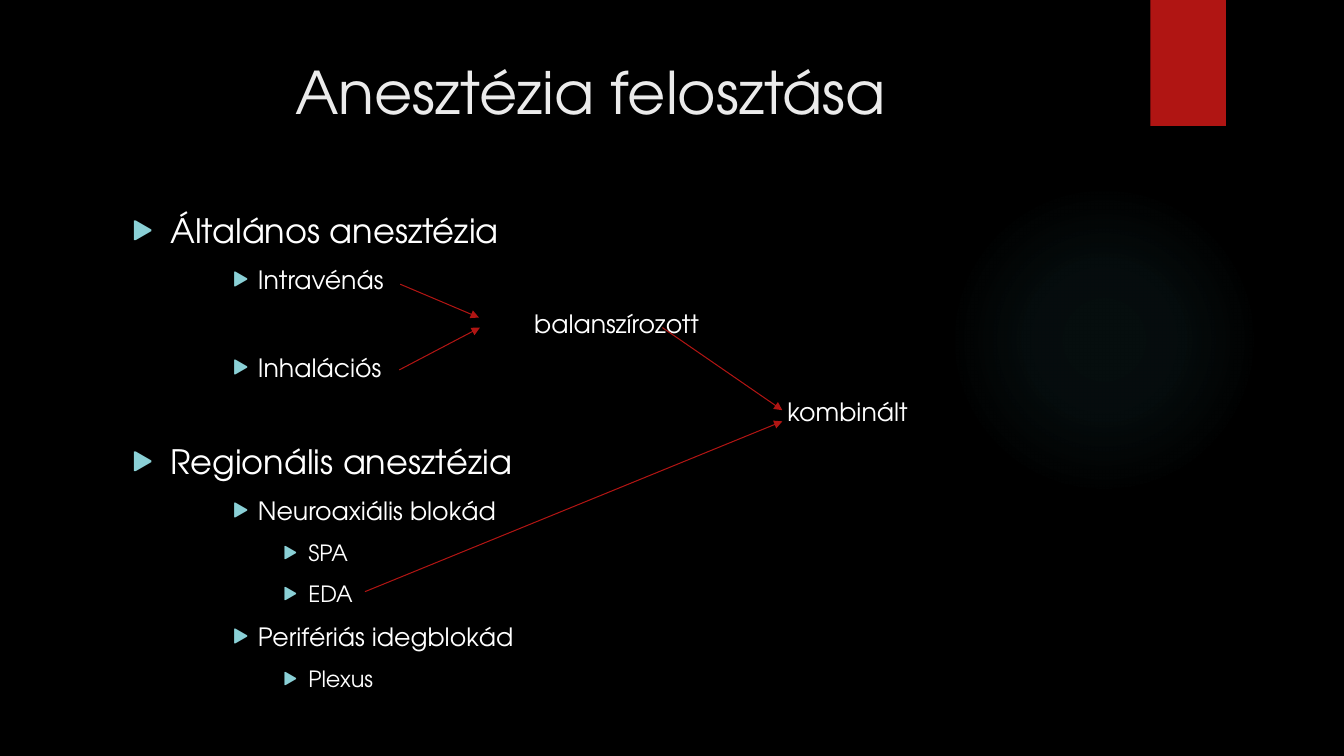
"""Builds the slide on the classification of anaesthesia."""
import lxml.etree
import pptx
import pptx.dml.color
import pptx.enum.shapes
import pptx.enum.text
import pptx.oxml
import pptx.oxml.ns
import pptx.util

Inches, Pt = pptx.util.Inches, pptx.util.Pt
RGBColor = pptx.dml.color.RGBColor
qn = pptx.oxml.ns.qn
PP_ALIGN = pptx.enum.text.PP_ALIGN

TITLE = "Anesztézia felosztása"
OUTLINE = [
    ("Általános anesztézia", "topic"),
    ("Intravénás", "type"),
    ("balanszírozott", "balanced"),
    ("Inhalációs", "type"),
    ("kombinált", "combined"),
    ("Regionális anesztézia", "topic"),
    ("Neuroaxiális blokád", "type"),
    ("SPA", "method"),
    ("EDA", "method"),
    ("Perifériás idegblokád", "type"),
    ("Plexus", "method"),
]
STYLES = {
    "topic": dict(size=24, level=0, left=0.38, hang=0.38),
    "type": dict(size=18, level=1, left=1.25, hang=0.25),
    "method": dict(size=16, level=2, left=1.75, hang=0.25),
    "balanced": dict(size=18, level=4, left=3.99),
    "combined": dict(size=18, level=1, left=6.5),
}
ARROWS = [
    ((3.97, 2.82), (4.75, 3.15)),
    ((3.96, 3.67), (4.76, 3.25)),
    ((6.57, 3.25), (7.76, 4.07)),
    ((3.62, 5.87), (7.76, 4.18)),
]
GLOW_STOPS = [(0, 7), (36, 6), (69, 0)]

FONT = "TeX Gyre Adventor"
BLACK = RGBColor(0x00, 0x00, 0x00)
WHITE = RGBColor(0xFF, 0xFF, 0xFF)
PALE = RGBColor(0xEB, 0xEB, 0xEB)
RED = RGBColor(0xB0, 0x15, 0x13)
AQUA = RGBColor(0x8A, 0xD0, 0xD6)
TEAL = RGBColor(0x50, 0xB9, 0xC1)


def add_bullet(pPr):
    """Give a paragraph the aqua triangle bullet."""
    color = lxml.etree.SubElement(pPr, qn("a:buClr"))
    lxml.etree.SubElement(color, qn("a:srgbClr"), val=str(AQUA))
    lxml.etree.SubElement(pPr, qn("a:buSzPct"), val="80000")
    lxml.etree.SubElement(pPr, qn("a:buFont"), typeface=FONT)
    lxml.etree.SubElement(pPr, qn("a:buChar"), char="▶")


def write(p, text, size, color=WHITE, align=PP_ALIGN.LEFT, level=0,
          left=0, hang=0, before=0):
    """Write formatted text into a paragraph."""
    pPr = p._p.get_or_add_pPr()
    pPr.set("marL", str(Inches(left)))
    pPr.set("indent", str(-Inches(hang)))
    if hang:
        add_bullet(pPr)
    p.level, p.alignment, p.space_before = level, align, Pt(before)
    r = p.add_run()
    r.text = text
    r.font.name, r.font.size = FONT, Pt(size)
    r.font.color.rgb = color


def prepare(tf):
    """Make a text frame wrap from the top at a fixed size."""
    tf.word_wrap = True
    tf.auto_size = pptx.enum.text.MSO_AUTO_SIZE.NONE
    tf.vertical_anchor = pptx.enum.text.MSO_ANCHOR.TOP


def add_plain_shape(s, kind, *box):
    """Add a red shape without outline or shadow."""
    sp = s.shapes.add_shape(kind, *map(Inches, box))
    sp.shadow.inherit = False
    sp.line.fill.background()
    sp.fill.solid()
    sp.fill.fore_color.rgb = RED
    return sp


def add_glow(s):
    """Add the faint round glow."""
    sp = add_plain_shape(s, pptx.enum.shapes.MSO_SHAPE.OVAL, 9.41, 1.83, 3.08, 3.08)
    solid = sp._element.spPr.find(qn("a:solidFill"))
    grad = pptx.oxml.parse_xml(
        f'<a:gradFill {pptx.oxml.ns.nsdecls("a")} rotWithShape="1"><a:gsLst/>'
        '<a:path path="circle"><a:fillToRect l="50000" t="50000" r="50000" b="50000"/>'
        '</a:path></a:gradFill>')
    for pos, alpha in GLOW_STOPS:
        gs = lxml.etree.SubElement(grad[0], qn("a:gs"), pos=str(pos * 1000))
        color = lxml.etree.SubElement(gs, qn("a:srgbClr"), val=str(TEAL))
        lxml.etree.SubElement(color, qn("a:alpha"), val=str(alpha * 1000))
    sp._element.spPr.replace(solid, grad)


def add_arrow(s, start, end):
    """Add a thin red arrow."""
    line = s.shapes.add_connector(
        pptx.enum.shapes.MSO_CONNECTOR.STRAIGHT, *map(Inches, start + end))
    line.line.color.rgb = RED
    line.line.width = Pt(0.75)
    lxml.etree.SubElement(line.line._get_or_add_ln(), qn("a:tailEnd"), type="triangle")
    lxml.etree.SubElement(line._element.spPr, qn("a:effectLst"))


def main():
    """Build and save the slide."""
    prs = pptx.Presentation()
    prs.slide_width, prs.slide_height = Inches(13.33), Inches(7.5)
    s = prs.slides.add_slide(prs.slide_layouts[5])
    s.background.fill.solid()
    s.background.fill.fore_color.rgb = BLACK

    add_glow(s)
    add_plain_shape(s, pptx.enum.shapes.MSO_SHAPE.RECTANGLE, 11.41, 0, 0.75, 1.25)

    title = s.shapes.title
    title.left, title.top = Inches(0.71), Inches(0.5)
    title.width, title.height = Inches(10.29), Inches(1.53)
    prepare(title.text_frame)
    write(title.text_frame.paragraphs[0], TITLE, 42, color=PALE, align=PP_ALIGN.CENTER)

    tf = s.shapes.add_textbox(*map(Inches, (1.21, 2.03, 9.78, 5.02))).text_frame
    prepare(tf)
    for i, (text, style) in enumerate(OUTLINE):
        p = tf.add_paragraph() if i else tf.paragraphs[0]
        write(p, text, before=10 if i else 0, **STYLES[style])

    for start, end in ARROWS:
        add_arrow(s, start, end)
    prs.save("out.pptx")


if __name__ == "__main__":
    main()
